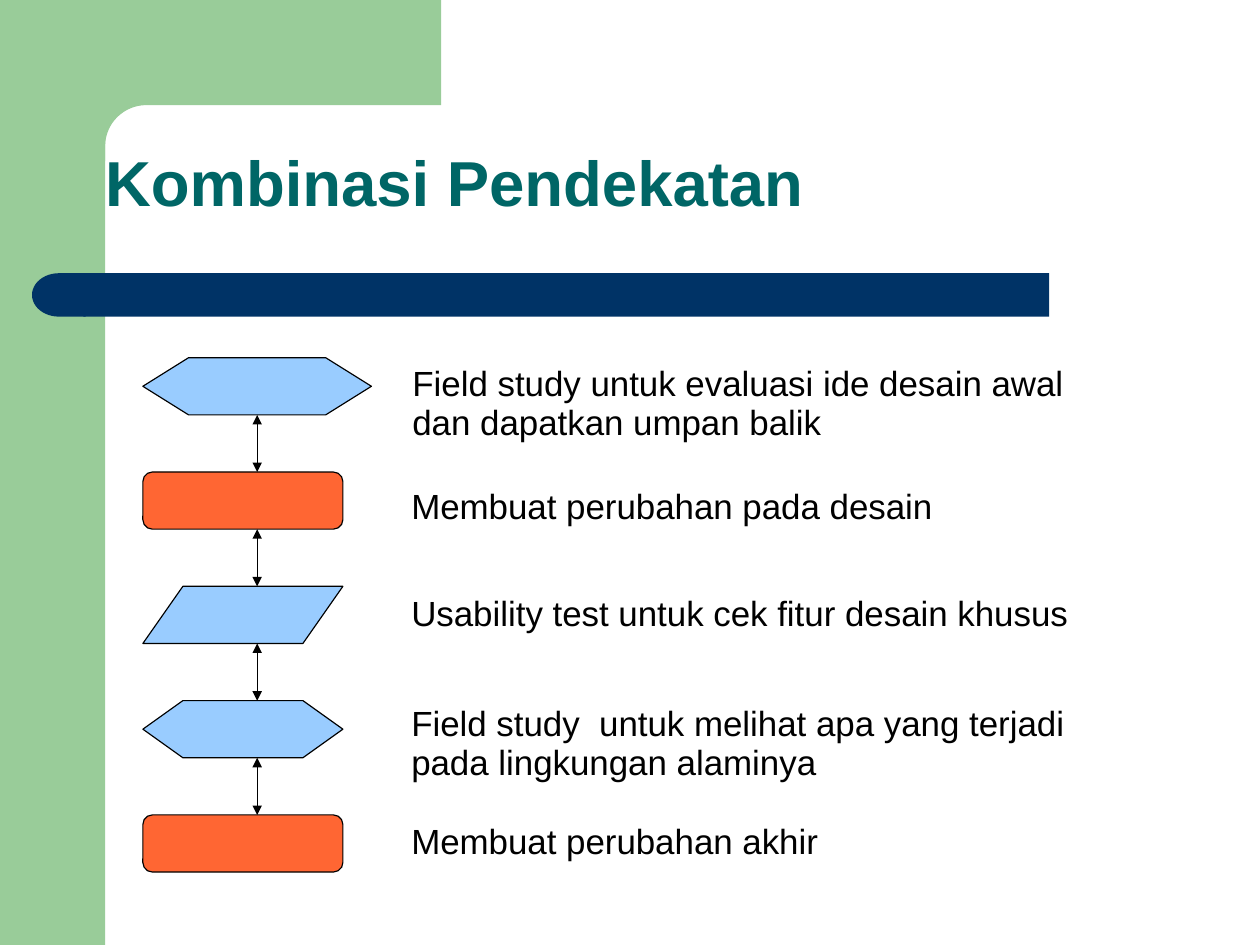
from math import cos, pi, sin

from lxml.etree import SubElement
from pptx import Presentation
from pptx.dml.color import RGBColor
from pptx.enum.shapes import MSO_CONNECTOR, MSO_SHAPE
from pptx.enum.text import MSO_ANCHOR, MSO_AUTO_SIZE, PP_ALIGN
from pptx.oxml.ns import qn
from pptx.util import Cm, Inches, Pt

GREEN = RGBColor(0x99, 0xCC, 0x99)
NAVY = RGBColor(0x00, 0x33, 0x66)
TEAL = RGBColor(0x00, 0x66, 0x66)
BLUE = RGBColor(0x99, 0xCC, 0xFF)
ORANGE = RGBColor(0xFF, 0x66, 0x33)
BLACK = RGBColor(0x00, 0x00, 0x00)

MARGIN = 0.92                 # width of the green side band
FLOW_LEFT, FLOW_TOP = 1.25, 3.13
ROW_STEP, STEP_HEIGHT = 1.0, 0.5
ARROW_X = 2.25


def paint(shape, fill, outlined=False):
    shape.shadow.inherit = False
    shape.fill.solid()
    shape.fill.fore_color.rgb = fill
    if outlined:
        shape.line.color.rgb = BLACK
        shape.line.width = Pt(0.75)
    else:
        shape.line.fill.background()


def write(shape, text, size, color, spacing, insets, bold=False):
    frame = shape.text_frame
    frame.word_wrap = True
    frame.auto_size = MSO_AUTO_SIZE.NONE
    (frame.margin_left, frame.margin_top,
     frame.margin_right, frame.margin_bottom) = map(Inches, insets)
    paragraph = frame.paragraphs[0]
    paragraph.alignment = PP_ALIGN.LEFT
    paragraph.line_spacing = spacing
    run = paragraph.add_run()
    run.text = text
    run.font.name = "Arial"
    run.font.size = Pt(size)
    run.font.bold = bold
    run.font.color.rgb = color


presentation = Presentation()
presentation.slide_width = Cm(28)
presentation.slide_height = Cm(21)
slide = presentation.slides.add_slide(presentation.slide_layouts[5])
shapes = slide.shapes

# Green side band
side_band = shapes.add_shape(MSO_SHAPE.RECTANGLE, 0, 0, Inches(MARGIN),
                             presentation.slide_height)
paint(side_band, GREEN)

# Green top block with a rounded inner corner
radius = 0.36
center = MARGIN + radius
corner = [(center - radius * sin(step * pi / 32), center - radius * cos(step * pi / 32))
          for step in range(17)]
outline = [(3.86, 0), (3.86, MARGIN), *corner, (MARGIN, 1.41), (0.55, 1.41), (0.55, 0)]
points = [(Inches(x), Inches(y)) for x, y in outline]
builder = shapes.build_freeform(*points[0])
builder.add_line_segments(points[1:], close=True)
paint(builder.convert_to_shape(), GREEN)

# Navy bar with a round left end
bar = shapes.add_shape(MSO_SHAPE.RECTANGLE, Inches(0.73), Inches(2.39), Inches(8.45), Inches(0.38))
paint(bar, NAVY)
bar_end = shapes.add_shape(MSO_SHAPE.FLOWCHART_DELAY, Inches(0.28), Inches(2.39),
                           Inches(0.47), Inches(0.38))
bar_end.rotation = 180
paint(bar_end, NAVY)

# Title
title = shapes.title
title.left, title.top = Inches(MARGIN), Inches(MARGIN)
title.width, title.height = Inches(9.56), Inches(1.38)
title.text_frame.vertical_anchor = MSO_ANCHOR.MIDDLE
write(title, "Kombinasi Pendekatan", 40, TEAL, 0.9, (0, 0.04, 0, 0), bold=True)

# Flow steps: shape, fill, width, label, label left, label top, label width, label height
steps = [
    (MSO_SHAPE.FLOWCHART_PREPARATION, BLUE, 2,
     "Field study untuk evaluasi ide desain awal dan dapatkan umpan balik", 3.51, 3.13, 6, 0.78),
    (MSO_SHAPE.FLOWCHART_ALTERNATE_PROCESS, ORANGE, 1.75,
     "Membuat perubahan pada desain", 3.5, 4.2, 6.25, 0.44),
    (MSO_SHAPE.FLOWCHART_DATA, BLUE, 1.75,
     "Usability test untuk cek fitur desain khusus", 3.5, 5.14, 6, 0.44),
    (MSO_SHAPE.FLOWCHART_PREPARATION, BLUE, 1.75,
     "Field study  untuk melihat apa yang terjadi pada lingkungan alaminya", 3.5, 6.1, 6, 0.78),
    (MSO_SHAPE.FLOWCHART_ALTERNATE_PROCESS, ORANGE, 1.75,
     "Membuat perubahan akhir", 3.5, 7.13, 6, 0.44),
]
for row, (kind, fill, width, text, *label_box) in enumerate(steps):
    top = FLOW_TOP + row * ROW_STEP
    step_shape = shapes.add_shape(kind, Inches(FLOW_LEFT), Inches(top),
                                  Inches(width), Inches(STEP_HEIGHT))
    paint(step_shape, fill, outlined=True)

    label = shapes.add_textbox(*map(Inches, label_box))
    write(label, text, 22, BLACK, 0.93, (0.1, 0.07, 0.1, 0.05))

    # Two-way arrow from the step above
    if row:
        arrow = shapes.add_connector(MSO_CONNECTOR.STRAIGHT,
                                     Inches(ARROW_X), Inches(top - ROW_STEP + STEP_HEIGHT),
                                     Inches(ARROW_X), Inches(top))
        arrow.line.color.rgb = BLACK
        arrow.line.width = Pt(0.75)
        line = arrow.line._get_or_add_ln()
        for end in ("a:headEnd", "a:tailEnd"):
            SubElement(line, qn(end), type="triangle")
        SubElement(arrow._element.spPr, qn("a:effectLst"))

presentation.save("out.pptx")
